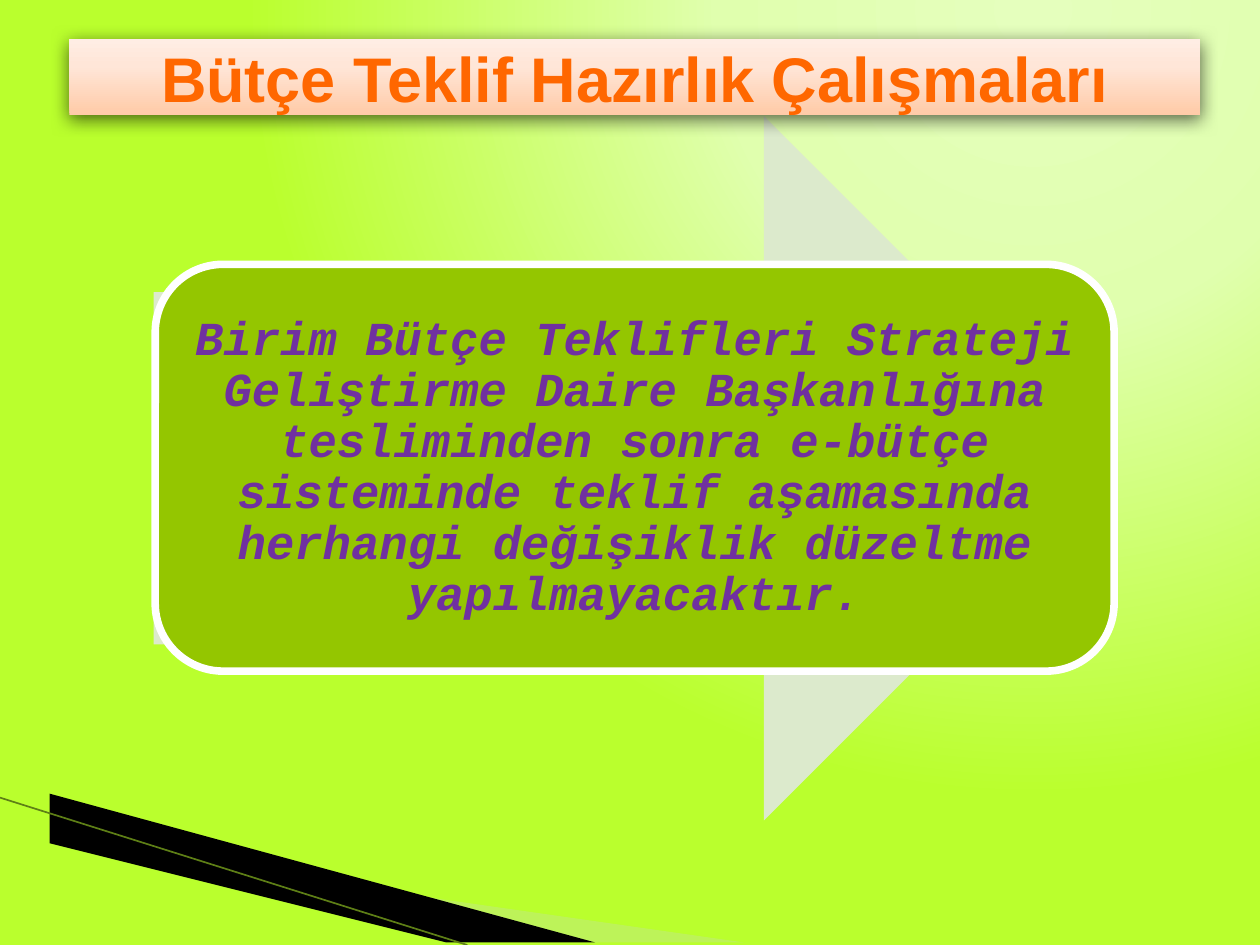
from lxml import etree
from pptx import Presentation
from pptx.dml.color import RGBColor
from pptx.enum.shapes import MSO_CONNECTOR, MSO_SHAPE
from pptx.enum.text import MSO_ANCHOR, PP_ALIGN
from pptx.oxml.ns import qn
from pptx.util import Cm, Pt

STRAIGHT = MSO_CONNECTOR.STRAIGHT
RIGHT_ARROW = MSO_SHAPE.RIGHT_ARROW
ROUNDED = MSO_SHAPE.ROUNDED_RECTANGLE
MIDDLE = MSO_ANCHOR.MIDDLE
CENTER = PP_ALIGN.CENTER

BLACK = RGBColor(0x00, 0x00, 0x00)
WHITE = RGBColor(0xFF, 0xFF, 0xFF)
GREEN = RGBColor(0x94, 0xC6, 0x00)
PALE_GREEN = RGBColor(0xDC, 0xEA, 0xCC)
WEDGE_GREEN = RGBColor(0xC3, 0xE1, 0x9D)
EDGE_GREEN = RGBColor(0x5E, 0x7F, 0x16)
ORANGE = RGBColor(0xFF, 0x67, 0x00)
PURPLE = RGBColor(0x70, 0x30, 0xA0)
BACKGROUND_STOPS = [(0, RGBColor(0xE5, 0xFF, 0xBD)), (40, RGBColor(0xE0, 0xFF, 0xAE)),
                    (100, RGBColor(0xBA, 0xFF, 0x2D))]
TITLE_STOPS = [(0, RGBColor(0xFF, 0xCB, 0xA8)), (65, RGBColor(0xFF, 0xE6, 0xD8)),
               (100, RGBColor(0xFF, 0xED, 0xE4))]


def add_element(parent, tag, **attributes):
    element = etree.SubElement(parent, qn(tag))
    for name, value in attributes.items():
        element.set(name, str(value))
    return element


def set_gradient(fill, properties, stops):
    """Give a fill its colour stops and return the gradient element."""
    fill.gradient()
    gradient = properties.find(".//" + qn("a:gradFill"))
    for child in list(gradient):
        gradient.remove(child)
    stop_list = add_element(gradient, "a:gsLst")
    for position, color in stops:
        stop = add_element(stop_list, "a:gs", pos=position * 1000)
        add_element(stop, "a:srgbClr", val=color)
    return gradient


class SlideBuilder:
    title_font = "Arial"
    body_font = "Courier New"

    def __init__(self, slide):
        self.slide = slide
        self.shapes = slide.shapes

    def background(self, stops):
        background = self.slide.background
        gradient = set_gradient(background.fill, self.slide.element, stops)
        circle = add_element(gradient, "a:path", path="circle")
        add_element(circle, "a:fillToRect", l=65000, t=0, r=0, b=98000)

    def wedge(self, points, color, opacity=100):
        builder = self.shapes.build_freeform(*points[0], scale=Cm(1))
        builder.add_line_segments(points[1:])
        shape = builder.convert_to_shape()
        self.paint(shape, color)
        if opacity < 100:
            color_element = shape.element.spPr.find(".//" + qn("a:srgbClr"))
            add_element(color_element, "a:alpha", val=opacity * 1000)

    def line(self, start, end, color, width):
        ends = [Cm(value) for value in (*start, *end)]
        connector = self.shapes.add_connector(STRAIGHT, *ends)
        connector.line.color.rgb = color
        connector.line.width = Pt(width)
        add_element(connector.element.spPr, "a:effectLst")

    def shape(self, kind, box, color):
        shape = self.shapes.add_shape(kind, *[Cm(value) for value in box])
        self.paint(shape, color)
        return shape

    def paint(self, shape, color):
        shape.shadow.inherit = False
        shape.fill.solid()
        shape.fill.fore_color.rgb = color
        shape.line.fill.background()

    def text(self, shape, text, font_name, size, color, italic=False):
        frame = shape.text_frame
        frame.word_wrap = True
        frame.vertical_anchor = MIDDLE
        frame.text = text
        paragraph = frame.paragraphs[0]
        paragraph.alignment = CENTER
        font = paragraph.font
        font.name, font.size, font.color.rgb = font_name, Pt(size), color
        font.bold, font.italic = True, italic
        return frame

    def card(self, box, text):
        shape = self.shape(ROUNDED, box, GREEN)
        shape.line.color.rgb = WHITE
        shape.line.width = Pt(4.33)
        frame = self.text(shape, text, self.body_font, 27, PURPLE, italic=True)
        frame.margin_left = frame.margin_right = Cm(0.28)
        frame.margin_top = frame.margin_bottom = Cm(0.28)
        frame.paragraphs[0].line_spacing = 0.9

    def title(self, box, text):
        title = self.shapes.title
        title.left, title.top, title.width, title.height = [Cm(value) for value in box]
        self.text(title, text, self.title_font, 36, ORANGE)
        properties = title.element.spPr
        gradient = set_gradient(title.fill, properties, TITLE_STOPS)
        add_element(gradient, "a:lin", ang=270 * 60000, scaled=0)
        # Soft shadow just below the title bar
        effects = add_element(properties, "a:effectLst")
        shadow = add_element(effects, "a:outerShdw", blurRad=Pt(10), dist=Pt(2.2),
                             dir=90 * 60000, rotWithShape=0)
        color = add_element(shadow, "a:srgbClr", val=BLACK)
        add_element(color, "a:alpha", val=60000)
        # The title lies in front of the arrow
        title.element.getparent().append(title.element)


def main():
    presentation = Presentation()
    presentation.slide_width, presentation.slide_height = Cm(25.4), Cm(19.05)
    slide = presentation.slides.add_slide(presentation.slide_layouts[5])
    builder = SlideBuilder(slide)

    # Backdrop and corner decoration
    builder.background(BACKGROUND_STOPS)
    builder.wedge([(1.4, 16.53), (15.11, 19.05), (11.58, 19.05), (1.4, 16.51)],
                  WEDGE_GREEN, opacity=40)
    builder.wedge([(1.35, 16.48), (11.6, 19.05), (9.45, 19.05), (1.37, 16.51)], BLACK)
    builder.line((0, 16.08), (9.42, 19.05), EDGE_GREEN, 0.95)

    # Arrow with the message card
    builder.shape(RIGHT_ARROW, (3.1, 2.34, 19.4, 14.2), PALE_GREEN)
    builder.card((3.13, 5.33, 19.33, 8.2),
                 "Birim Bütçe Teklifleri Strateji Geliştirme Daire Başkanlığına "
                 "tesliminden sonra e-bütçe sisteminde teklif aşamasında herhangi "
                 "değişiklik düzeltme yapılmayacaktır.")

    # Title bar
    builder.title((1.4, 0.79, 22.8, 1.52), "Bütçe Teklif Hazırlık Çalışmaları")

    presentation.save("out.pptx")


if __name__ == "__main__":
    main()
